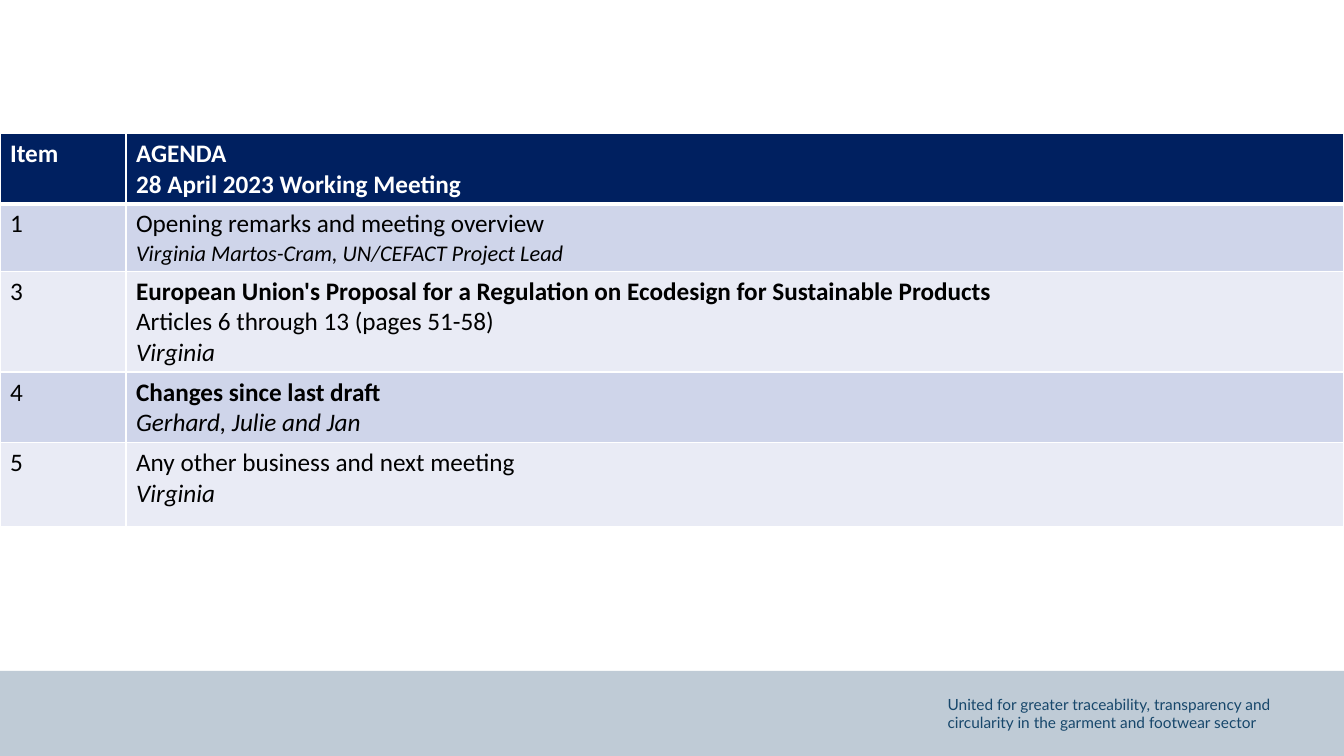
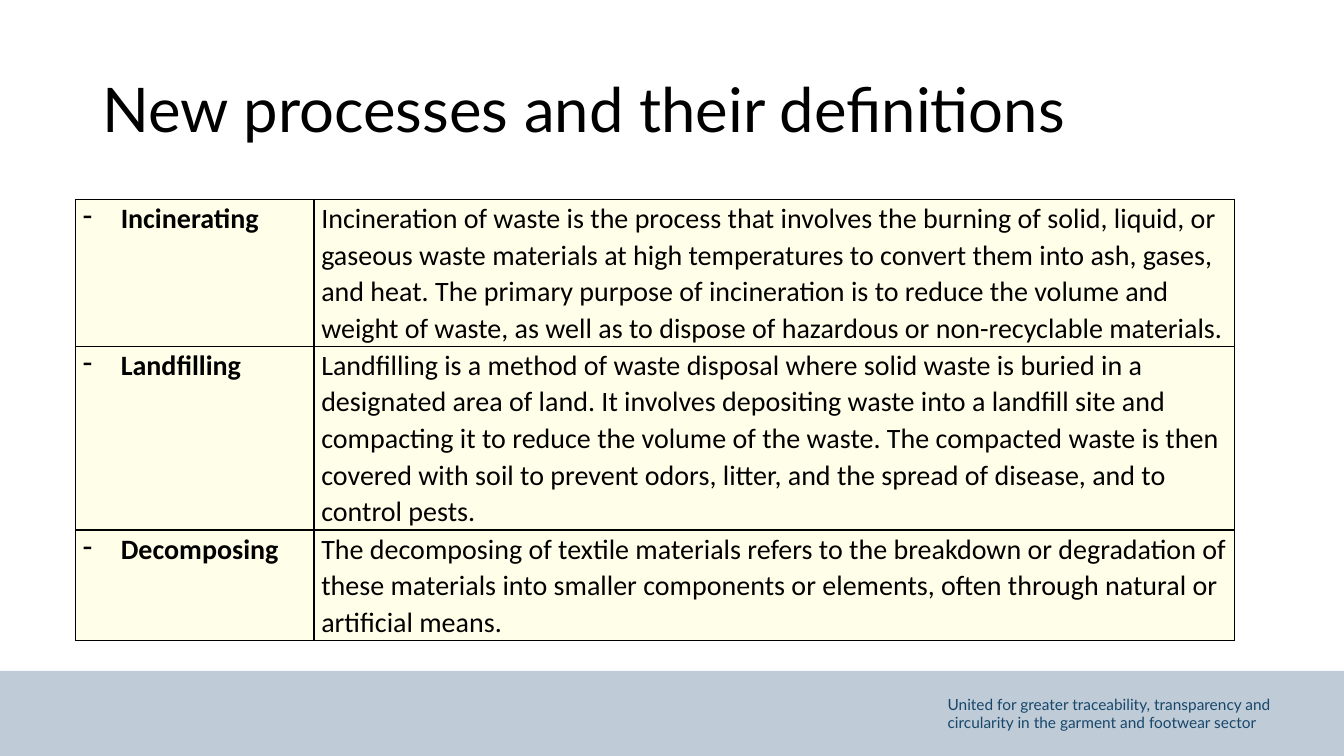
"""Build a meeting agenda slide and a slide of process definitions."""
import dataclasses

import pptx
import pptx.dml.color
import pptx.enum.shapes
import pptx.enum.text
import pptx.oxml
import pptx.oxml.ns
import pptx.util

EMU_PER_PX = 9525
ALIGN = pptx.enum.text.PP_ALIGN
ANCHOR = pptx.enum.text.MSO_ANCHOR


@dataclasses.dataclass(frozen=True)
class Theme:
    """Colours, fonts and type sizes of the deck."""

    white: str = "FFFFFF"
    black: str = "000000"
    navy: str = "002060"
    band: str = "BFCBD6"
    footer: str = "17476B"
    stripes: tuple = ("E9EBF5", "CFD5EA")
    cream: str = "FFFFE9"
    heading_font: str = "Lato"
    table_font: str = "Calibri"
    title_size: int = 44
    definition_size: int = 20
    agenda_size: int = 18
    speaker_size: int = 16
    footer_size: int = 11


THEME = Theme()
BOLD = {"bold": True}
ITALIC = {"italic": True}
SMALL_ITALIC = {"italic": True, "size": THEME.speaker_size}

AGENDA = [
    ("Item", [("AGENDA", BOLD), ("28 April 2023 Working Meeting", BOLD)]),
    ("1", [("Opening remarks and meeting overview", {}),
           ("Virginia Martos-Cram, UN/CEFACT Project Lead", SMALL_ITALIC)]),
    ("3", [("European Union's Proposal for a Regulation on Ecodesign for Sustainable Products", BOLD),
           ("Articles 6 through 13 (pages 51-58)", {}),
           ("Virginia", ITALIC)]),
    ("4", [("Changes since last draft", BOLD), ("Gerhard, Julie and Jan", ITALIC)]),
    ("5", [("Any other business and next meeting", {}), ("Virginia", ITALIC)]),
]
DEFINITIONS = [
    ("Incinerating",
     "Incineration of waste is the process that involves the burning of solid, liquid, or gaseous "
     "waste materials at high temperatures to convert them into ash, gases, and heat. The primary "
     "purpose of incineration is to reduce the volume and weight of waste, as well as to dispose of "
     "hazardous or non-recyclable materials."),
    ("Landfilling",
     "Landfilling is a method of waste disposal where solid waste is buried in a designated area of "
     "land. It involves depositing waste into a landfill site and compacting it to reduce the volume "
     "of the waste. The compacted waste is then covered with soil to prevent odors, litter, and the "
     "spread of disease, and to control pests."),
    ("Decomposing",
     "The decomposing of textile materials refers to the breakdown or degradation of these materials "
     "into smaller components or elements, often through natural or artificial means."),
]


def px(length):
    """Turn pixels into EMU."""
    return pptx.util.Emu(length * EMU_PER_PX)


def box(left, top, width, height):
    """Return a position and size in EMU."""
    return [px(length) for length in (left, top, width, height)]


def rgb(colour):
    """Return a colour object for a hex string."""
    return pptx.dml.color.RGBColor.from_string(colour)


def set_attributes(target, values):
    """Set each named attribute of the target."""
    for name, value in values.items():
        setattr(target, name, value)


def write(paragraph, text, font, **layout):
    """Add one formatted run to a paragraph."""
    set_attributes(paragraph, layout)
    run = paragraph.add_run()
    run.text = text
    values = {"bold": False, "italic": False, **font}
    run.font.color.rgb = rgb(values.pop("color", THEME.black))
    values["size"] = pptx.util.Pt(values["size"])
    set_attributes(run.font, values)


def add_bullet(paragraph, character, indent):
    """Give a paragraph a hanging bullet."""
    properties = paragraph._p.get_or_add_pPr()
    properties.set("marL", str(px(indent)))
    properties.set("indent", str(-px(indent)))
    bullet = pptx.oxml.parse_xml(f'<a:buChar {pptx.oxml.ns.nsdecls("a")} char="{character}"/>')
    properties.append(bullet)


def style_cell(cell, fill, border, widths):
    """Set the borders (left, right, top, bottom) and the fill of a cell."""
    properties = cell._tc.get_or_add_tcPr()
    for side, width in zip("LRTB", widths):
        properties.append(pptx.oxml.parse_xml(
            f'<a:ln{side} {pptx.oxml.ns.nsdecls("a")} w="{pptx.util.Pt(width)}">'
            f'<a:solidFill><a:srgbClr val="{border}"/></a:solidFill></a:ln{side}>'))
    cell.fill.solid()
    cell.fill.fore_color.rgb = rgb(fill)


def add_table(slide, left, top, columns, rows):
    """Add a plain table with the given column widths and row heights."""
    frame = slide.shapes.add_table(
        len(rows), len(columns), *box(left, top, sum(columns), sum(rows)))
    table = frame.table
    set_attributes(table, {"first_row": False, "horz_banding": False})
    for column, width in zip(table.columns, columns):
        column.width = px(width)
    for row, height in zip(table.rows, rows):
        row.height = px(height)
    return table


def add_footer(presentation, slide):
    """Draw the footer band and motto, then move them to the slide master."""
    band = slide.shapes.add_shape(
        pptx.enum.shapes.MSO_SHAPE.RECTANGLE, *box(0, 639, 1280, 81))
    band.shadow.inherit = False
    band.fill.solid()
    band.fill.fore_color.rgb = rgb(THEME.band)
    band.line.fill.background()
    motto = slide.shapes.add_textbox(*box(893, 657, 356, 45))
    motto.text_frame.word_wrap = True
    write(motto.text_frame.paragraphs[0],
          "United for greater traceability, transparency and circularity in the garment and footwear sector",
          {"name": THEME.heading_font, "size": THEME.footer_size, "color": THEME.footer},
          alignment=ALIGN.LEFT)
    master_shapes = presentation.slide_master.shapes
    for shape in (band, motto):
        next_id = max(member.shape_id for member in master_shapes) + 1
        shape.element.nvSpPr.cNvPr.set("id", str(next_id))
        master_shapes.element.append(shape.element)


def fill_agenda(slide):
    """Add the agenda table."""
    table = add_table(slide, 0, 127, [120, 1160], [67, 62, 96, 67, 80])
    for index, (item, lines) in enumerate(AGENDA):
        header = index == 0
        base = {"name": THEME.table_font, "size": THEME.agenda_size,
                "color": THEME.white if header else THEME.black}
        fill = THEME.navy if header else THEME.stripes[index % 2]
        widths = (1, 1, 3 if index == 1 else 1, 3 if header else 1)
        item_lines = [(item, BOLD if header else {})]
        for cell, content in zip(table.rows[index].cells, (item_lines, lines)):
            style_cell(cell, fill, THEME.white, widths)
            for number, (text, font) in enumerate(content):
                frame = cell.text_frame
                paragraph = frame.add_paragraph() if number else frame.paragraphs[0]
                write(paragraph, text, {**base, **font})


def fill_definitions(slide):
    """Add the title and the table of definitions."""
    title = slide.shapes.title
    set_attributes(title, dict(zip(("left", "top", "width", "height"), box(88, 38, 1104, 139))))
    title.text_frame.vertical_anchor = ANCHOR.MIDDLE
    write(title.text_frame.paragraphs[0], "New processes and their definitions",
          {"name": THEME.heading_font, "size": THEME.title_size},
          alignment=ALIGN.LEFT, line_spacing=0.9)
    table = add_table(slide, 72, 190, [227, 877], [139, 175, 105])
    margins = {"margin_left": px(7), "margin_right": px(7), "margin_top": 0, "margin_bottom": 0}
    for row, content in zip(table.rows, DEFINITIONS):
        for column, (cell, text) in enumerate(zip(row.cells, content)):
            style_cell(cell, THEME.cream, THEME.black, (1, 1, 1, 1))
            set_attributes(cell, margins)
            paragraph = cell.text_frame.paragraphs[0]
            if column == 0:
                add_bullet(paragraph, "-", 36)
            write(paragraph, text,
                  {"name": THEME.table_font, "size": THEME.definition_size, "bold": column == 0},
                  line_spacing=1.07, space_after=pptx.util.Pt(8))


def main():
    """Build and save the presentation."""
    presentation = pptx.Presentation()
    set_attributes(presentation, {"slide_width": px(1280), "slide_height": px(720)})
    title_only, blank = presentation.slide_layouts[5], presentation.slide_layouts[6]
    agenda = presentation.slides.add_slide(blank)
    add_footer(presentation, agenda)
    fill_agenda(agenda)
    fill_definitions(presentation.slides.add_slide(title_only))
    presentation.save("out.pptx")


if __name__ == "__main__":
    main()
